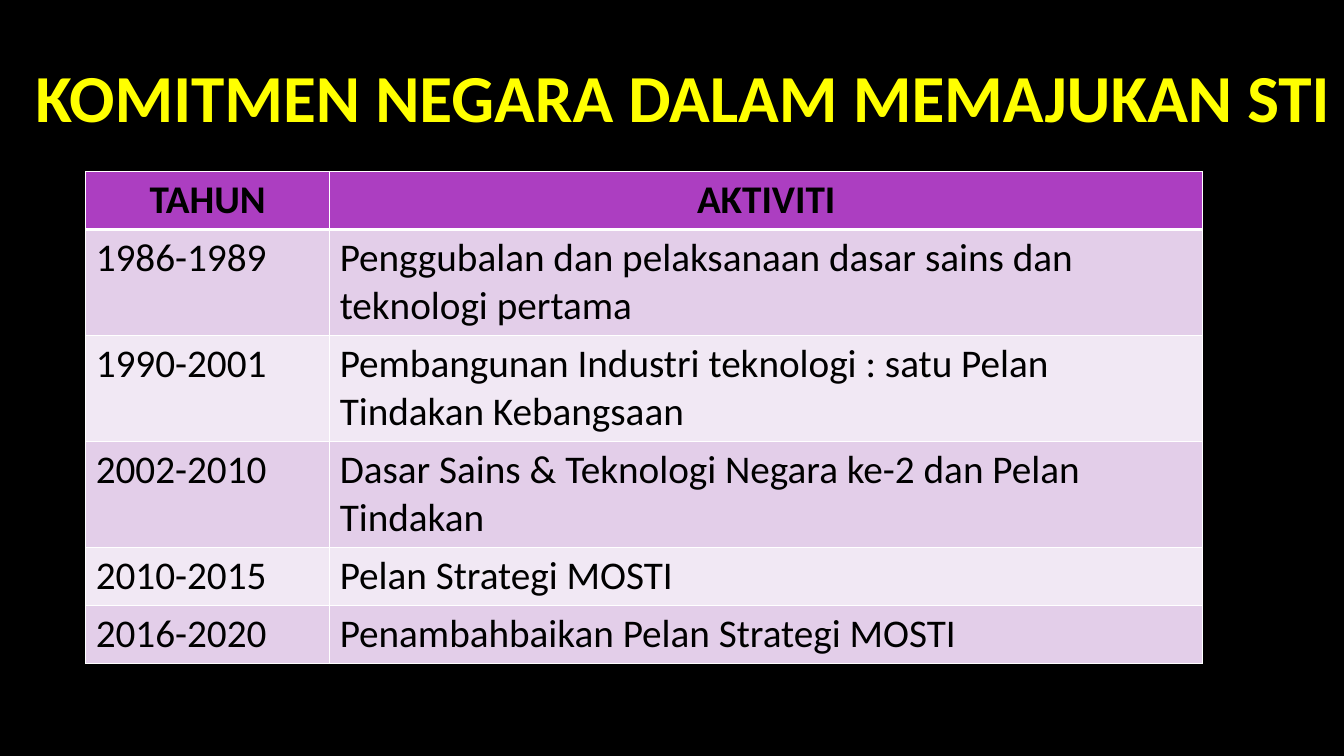
from lxml import etree
from pptx import Presentation
from pptx.dml.color import RGBColor
from pptx.enum.text import MSO_ANCHOR, MSO_AUTO_SIZE, PP_ALIGN
from pptx.oxml.ns import qn
from pptx.util import Inches, Pt

LEFT, CENTER = PP_ALIGN.LEFT, PP_ALIGN.CENTER
MIDDLE = MSO_ANCHOR.MIDDLE
NO_AUTOFIT = MSO_AUTO_SIZE.NONE

FONT = "Calibri"
COLORS = {
    "background": "000000",
    "title": "FFFF00",
    "text": "000000",
    "header": "AC3EC1",
    "odd_row": "E3CEE9",
    "even_row": "F1E8F4",
    "border": "FFFFFF",
}
COLUMN_WIDTHS = (2.42, 8.66)
ONE_LINE, TWO_LINES = 0.57, 1.05
ROWS = [
    (ONE_LINE, "TAHUN", "AKTIVITI"),
    (TWO_LINES, "1986-1989",
     "Penggubalan dan pelaksanaan dasar sains dan teknologi pertama"),
    (TWO_LINES, "1990-2001",
     "Pembangunan Industri teknologi : satu Pelan Tindakan Kebangsaan"),
    (TWO_LINES, "2002-2010",
     "Dasar Sains & Teknologi Negara ke-2 dan Pelan Tindakan"),
    (ONE_LINE, "2010-2015", "Pelan Strategi MOSTI"),
    (ONE_LINE, "2016-2020", "Penambahbaikan Pelan Strategi MOSTI"),
]


def rgb(name):
    return RGBColor.from_string(COLORS[name])


def style_paragraph(para, size, color, bold, align):
    para.alignment = align
    para.font.name = FONT
    para.font.size = Pt(size)
    para.font.bold = bold
    para.font.color.rgb = rgb(color)


def add_title(page, text):
    title = page.shapes.title
    title.left, title.top = Inches(0.25), Inches(0.36)
    title.width, title.height = Inches(13.08), Inches(1.17)
    frame = title.text_frame
    frame.text = text
    frame.word_wrap = True
    frame.auto_size = NO_AUTOFIT
    frame.vertical_anchor = MIDDLE
    style_paragraph(frame.paragraphs[0], 48, "title", True, LEFT)


def set_borders(cell, bottom_width):
    """Draw all four cell edges; the schema wants them before the fill."""
    properties = cell._tc.get_or_add_tcPr()
    widths = {"a:lnL": 1, "a:lnR": 1, "a:lnT": 1, "a:lnB": bottom_width}
    for position, (tag, width) in enumerate(widths.items()):
        line = etree.Element(qn(tag), w=str(Pt(width)))
        fill = etree.SubElement(line, qn("a:solidFill"))
        etree.SubElement(fill, qn("a:srgbClr"), val=COLORS["border"])
        properties.insert(position, line)


def fill_cell(cell, text, row_index):
    is_header = row_index == 0
    row_color = "odd_row" if row_index % 2 else "even_row"
    cell.text = text
    cell.fill.solid()
    cell.fill.fore_color.rgb = rgb("header" if is_header else row_color)
    style_paragraph(cell.text_frame.paragraphs[0], 28, "text", is_header,
                    CENTER if is_header else LEFT)
    set_borders(cell, 3 if is_header else 1)


def add_activity_table(page):
    height = sum(row[0] for row in ROWS)
    table = page.shapes.add_table(
        len(ROWS), len(COLUMN_WIDTHS), Inches(0.85), Inches(1.7),
        Inches(sum(COLUMN_WIDTHS)), Inches(height)).table
    for column, width in zip(table.columns, COLUMN_WIDTHS):
        column.width = Inches(width)
    for row_index, (row_height, *texts) in enumerate(ROWS):
        table.rows[row_index].height = Inches(row_height)
        for column_index, text in enumerate(texts):
            fill_cell(table.cell(row_index, column_index), text, row_index)


def main():
    deck = Presentation()
    deck.slide_width, deck.slide_height = Inches(13.33), Inches(7.5)
    title_only = deck.slide_layouts[5]
    page = deck.slides.add_slide(title_only)
    page.background.fill.solid()
    page.background.fill.fore_color.rgb = rgb("background")
    add_title(page, "KOMITMEN NEGARA DALAM MEMAJUKAN STI")
    add_activity_table(page)
    deck.save("out.pptx")


if __name__ == "__main__":
    main()
